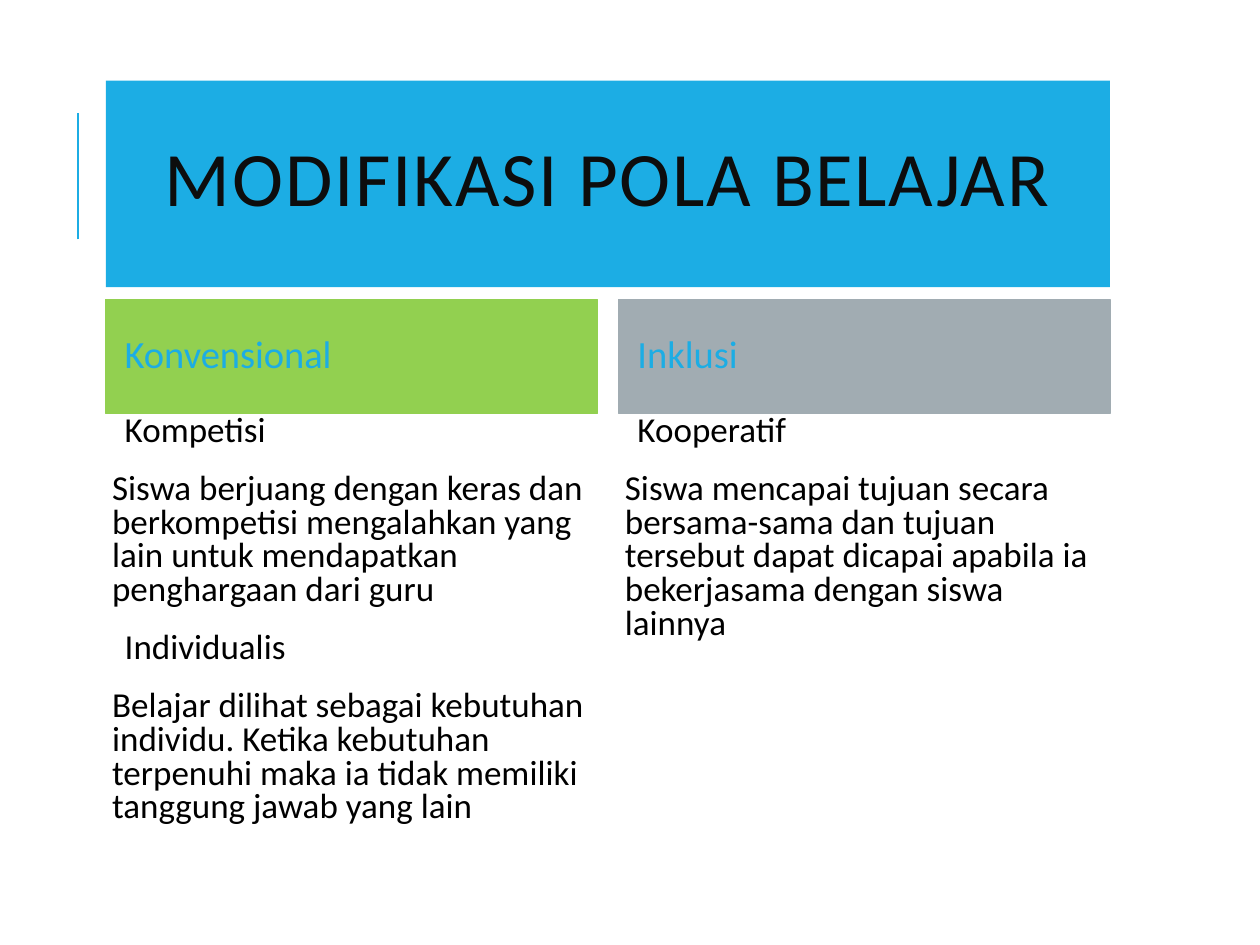
from dataclasses import dataclass

from lxml.etree import SubElement
from pptx import Presentation
from pptx.dml.color import RGBColor
from pptx.enum.shapes import MSO_CONNECTOR, MSO_SHAPE
from pptx.enum.text import MSO_ANCHOR, PP_ALIGN
from pptx.oxml.ns import qn
from pptx.shapes.base import BaseShape
from pptx.slide import Slide
from pptx.text.text import TextFrame
from pptx.util import Inches, Length, Pt

BLUE = RGBColor(0x1C, 0xAD, 0xE4)
GREEN = RGBColor(0x92, 0xD0, 0x50)
GRAY = RGBColor(0xA1, 0xAC, 0xB2)
BLACK = RGBColor(0, 0, 0)
NEAR_BLACK = RGBColor(0x0D, 0x0D, 0x0D)

FONT = "Calibri"
LEFT = Inches(0.84)
COLUMN_WIDTH = Inches(3.9)
COLUMN_STEP = Inches(4.07)
TITLE_WIDTH = COLUMN_STEP + COLUMN_WIDTH


@dataclass
class Topic:
    name: str
    description: str


@dataclass
class Column:
    heading: str
    color: RGBColor
    topics: list[Topic]


COLUMNS = [
    Column("Konvensional", GREEN, [
        Topic("Kompetisi",
              "Siswa berjuang dengan keras dan berkompetisi mengalahkan yang "
              "lain untuk mendapatkan penghargaan dari guru"),
        Topic("Individualis",
              "Belajar dilihat sebagai kebutuhan individu. Ketika kebutuhan "
              "terpenuhi maka ia tidak memiliki tanggung jawab yang lain"),
    ]),
    Column("Inklusi", GRAY, [
        Topic("Kooperatif",
              "Siswa mencapai tujuan secara bersama-sama dan tujuan tersebut "
              "dapat dicapai apabila ia bekerjasama dengan siswa lainnya"),
    ]),
]


def write(frame: TextFrame, text: str, *, size: float, color: RGBColor,
          line_spacing: float, align: PP_ALIGN = PP_ALIGN.LEFT,
          before: float = 0, after: float = 0, indent: float = 0,
          tracking: float = 0) -> None:
    """Fill the empty first paragraph, or append a new one."""
    first = not frame.text
    para = frame.paragraphs[0] if first else frame.add_paragraph()
    para.alignment = align
    para.line_spacing = line_spacing
    para.space_before = Pt(0 if first else before)
    para.space_after = Pt(after)
    if indent:
        para._p.get_or_add_pPr().set("marL", str(Inches(indent)))
    span = para.add_run()
    span.text = text
    span.font.name = FONT
    span.font.size = Pt(size)
    span.font.color.rgb = color
    if tracking:
        span._r.get_or_add_rPr().set("spc", str(round(tracking * 100)))


def prepare_frame(box: BaseShape, anchor: MSO_ANCHOR, side: float) -> TextFrame:
    frame = box.text_frame
    frame.word_wrap = True
    frame.vertical_anchor = anchor
    frame.margin_left = frame.margin_right = Inches(side)
    frame.margin_top = frame.margin_bottom = Inches(0.05)
    return frame


def add_band(slide: Slide, left: Length, top: Length, width: Length,
             height: Length, color: RGBColor, *, outlined: bool = False,
             side: float = 0.1) -> TextFrame:
    """Draw a filled rectangle and return its text frame."""
    band = slide.shapes.add_shape(MSO_SHAPE.RECTANGLE, left, top, width, height)
    band.shadow.inherit = False
    band.fill.solid()
    band.fill.fore_color.rgb = color
    if outlined:
        band.line.color.rgb = color
        band.line.width = Pt(0.75)
    else:
        band.line.fill.background()
    return prepare_frame(band, MSO_ANCHOR.MIDDLE, side)


def add_accent_line(slide: Slide) -> None:
    line = slide.shapes.add_connector(
        MSO_CONNECTOR.STRAIGHT, Inches(0.62), Inches(1.9), Inches(0.62), Inches(0.9))
    line.line.color.rgb = BLUE
    line.line.width = Pt(1.5)
    SubElement(line._element.spPr, qn("a:effectLst"))


def add_column(slide: Slide, column: Column, left: Length) -> None:
    heading = add_band(slide, left, Inches(2.38), COLUMN_WIDTH, Inches(0.9),
                       column.color, outlined=True, side=0.15)
    write(heading, column.heading, size=22, color=BLUE, line_spacing=0.9)

    box = slide.shapes.add_textbox(left, Inches(3.25), COLUMN_WIDTH, Inches(3.65))
    body = prepare_frame(box, MSO_ANCHOR.TOP, 0.05)
    for topic in column.topics:
        for text, indent in ((topic.name, 0.1), (topic.description, 0)):
            write(body, text, size=20, color=BLACK, line_spacing=0.8,
                  before=12, after=2, indent=indent)


def main() -> None:
    deck = Presentation()
    deck.slide_width, deck.slide_height = Inches(10), Inches(7.5)
    slide = deck.slides.add_slide(deck.slide_layouts[6])

    add_accent_line(slide)
    title = add_band(slide, LEFT, Inches(0.64), TITLE_WIDTH, Inches(1.64), BLUE)
    write(title, "MODIFIKASI POLA BELAJAR", size=44, color=NEAR_BLACK,
          line_spacing=0.8, align=PP_ALIGN.CENTER, tracking=1)
    for index, column in enumerate(COLUMNS):
        add_column(slide, column, LEFT + index * COLUMN_STEP)

    deck.save("out.pptx")


if __name__ == "__main__":
    main()
